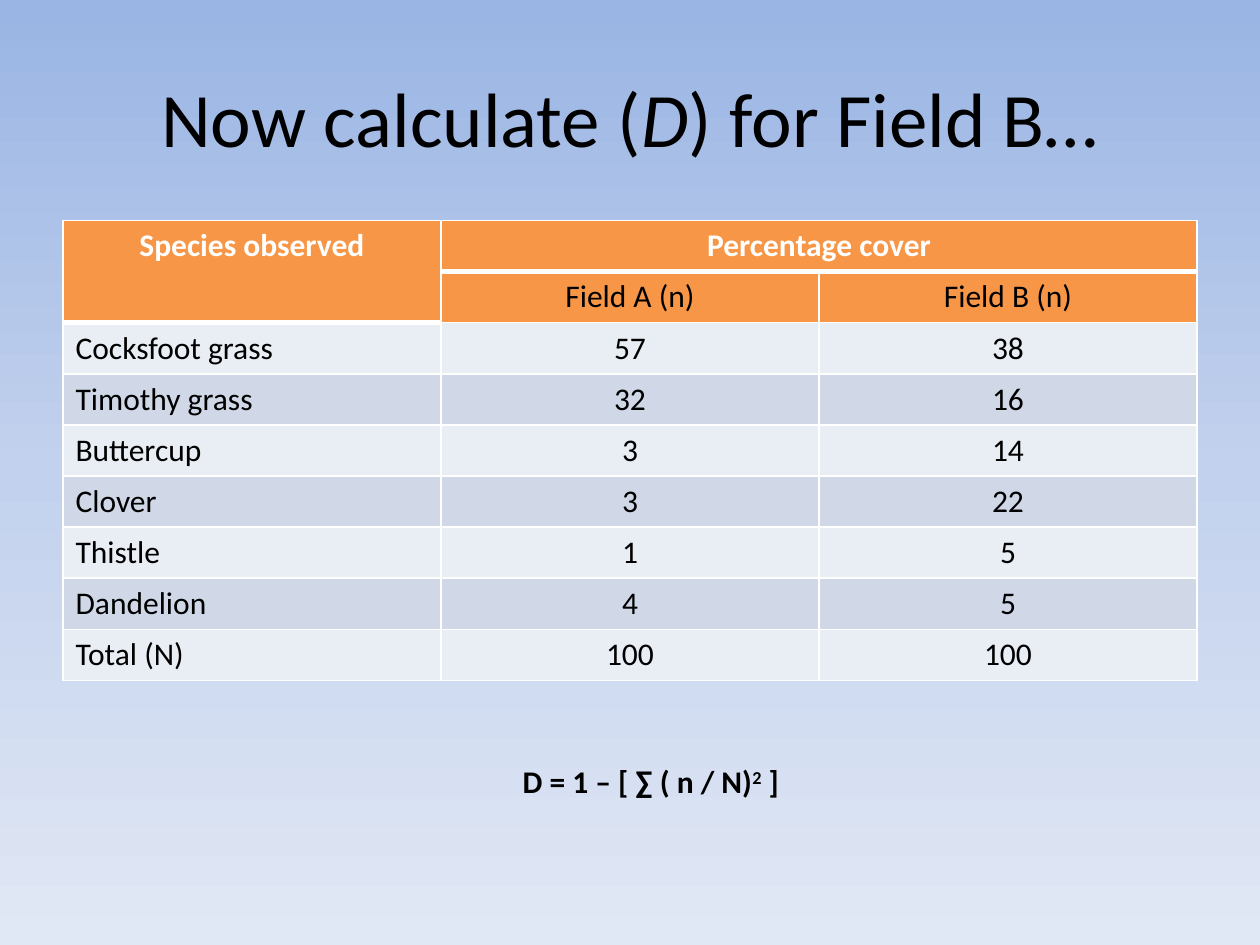
"""Build the Field B diversity slide: title, species table and formula."""
from dataclasses import dataclass

from lxml import etree
from pptx import Presentation, util as u
from pptx.dml.color import RGBColor
from pptx.enum import text as t
from pptx.oxml.ns import qn

HUES = {
    "top": "9AB5E4", "mid": "C2D1ED", "base": "E1E8F5",
    "head": "F79646", "pale": "E9EDF4", "dark": "D0D8E8",
    "ink": "000000", "white": "FFFFFF",
}
COLS, ROWS = 200, 150
WIDE, TALL = u.Inches(10), u.Inches(7.5)
HEADS = [("Species observed", "Percentage cover", ""),
         ("", "Field A (n)", "Field B (n)")]
COVER = [
    ("Cocksfoot grass", 57, 38),
    ("Timothy grass", 32, 16),
    ("Buttercup", 3, 14),
    ("Clover", 3, 22),
    ("Thistle", 1, 5),
    ("Dandelion", 4, 5),
    ("Total (N)", 100, 100),
]


@dataclass
class Box:
    """Hold a place in grid columns and rows."""
    col: float
    row: float
    wide: float
    tall: float

    def spot(self) -> list[int]:
        """Return left, top, width and height as lengths."""
        return [round(self.col * WIDE / COLS), round(self.row * TALL / ROWS),
                round(self.wide * WIDE / COLS), round(self.tall * TALL / ROWS)]


@dataclass
class Part:
    """Hold a stretch of text with its own slant or rise."""
    text: str
    slant: bool = False
    rise: int = 0


def write(frame, parts: list[Part], size: int = 18, hue: str = "ink",
          bold: bool = False, align=t.PP_ALIGN.CENTER,
          anchor=t.MSO_ANCHOR.TOP) -> None:
    """Write one formatted paragraph into a text frame."""
    frame.word_wrap = True
    frame.vertical_anchor = anchor
    para = frame.paragraphs[0]
    para.alignment = align
    for part in parts:
        run = para.add_run()
        run.text = part.text
        font = run.font
        font.name, font.size = "Calibri", u.Pt(size)
        font.bold, font.italic = bold, part.slant
        font.color.rgb = RGBColor.from_string(HUES[hue])
        if part.rise:
            font._element.set("baseline", str(part.rise * 1000))


def label(slide, box: Box, parts: list[Part], **form) -> None:
    """Add a text box."""
    write(slide.shapes.add_textbox(*box.spot()).text_frame, parts, **form)


def tint(node, hue: str) -> None:
    """Add a colour element to a node."""
    etree.SubElement(node, qn("a:srgbClr"), val=HUES[hue])


def shade(slide, hues: list[str]) -> None:
    """Fill the background with evenly spaced colours from top to bottom."""
    fill = slide.background.fill
    fill.gradient()
    fill.gradient_angle = 270
    stops = slide.element.find(".//" + qn("a:gsLst"))
    for stop in list(stops):
        stops.remove(stop)
    for i, hue in enumerate(hues):
        pos = i * 100000 // (len(hues) - 1)
        tint(etree.SubElement(stops, qn("a:gs"), pos=str(pos)), hue)


def edge(cell, top: int, base: int) -> None:
    """Draw white borders on a cell, with point widths above and below."""
    props = cell._tc.get_or_add_tcPr()
    for i, (side, width) in enumerate(zip("LRTB", (1, 1, top, base))):
        line = etree.Element(qn("a:ln" + side), w=str(u.Pt(width)))
        tint(etree.SubElement(line, qn("a:solidFill")), "white")
        props.insert(i, line)


def chart(slide, box: Box) -> None:
    """Add the table of species cover."""
    data = HEADS + COVER
    grid = slide.shapes.add_table(len(data), 3, *box.spot()).table
    grid.cell(0, 0).merge(grid.cell(1, 0))
    grid.cell(0, 1).merge(grid.cell(0, 2))
    for r, row in enumerate(data):
        for c, word in enumerate(row):
            cell = grid.cell(r, c)
            fill = "head" if r < 2 else ("pale", "dark")[r % 2]
            cell.fill.solid()
            cell.fill.fore_color.rgb = RGBColor.from_string(HUES[fill])
            last = 1 if c == 0 else 0
            edge(cell, 3 if r == last + 1 else 1,
                 3 if r in (0, last) else 1)
            if word == "":
                continue
            side = t.PP_ALIGN.LEFT if r > 1 and c == 0 else t.PP_ALIGN.CENTER
            write(cell.text_frame, [Part(str(word))], bold=r == 0,
                  hue="white" if r == 0 else "ink", align=side)


def main() -> None:
    """Build and save the deck."""
    deck = Presentation()
    deck.slide_width, deck.slide_height = WIDE, TALL
    slide = deck.slides.add_slide(deck.slide_layouts[6])
    shade(slide, ["top", "mid", "base"])
    label(slide, Box(10, 6, 180, 25),
          [Part("Now calculate ("), Part("D", slant=True),
           Part(") for Field B…")],
          size=44, anchor=t.MSO_ANCHOR.MIDDLE)
    chart(slide, Box(10, 35, 180, 73))
    label(slide, Box(16.6, 120, 173.4, 8),
          [Part("D = 1 – [ ∑ ( n / N)"), Part("2", rise=30), Part(" ]")],
          bold=True)
    deck.save("out.pptx")


if __name__ == "__main__":
    main()
